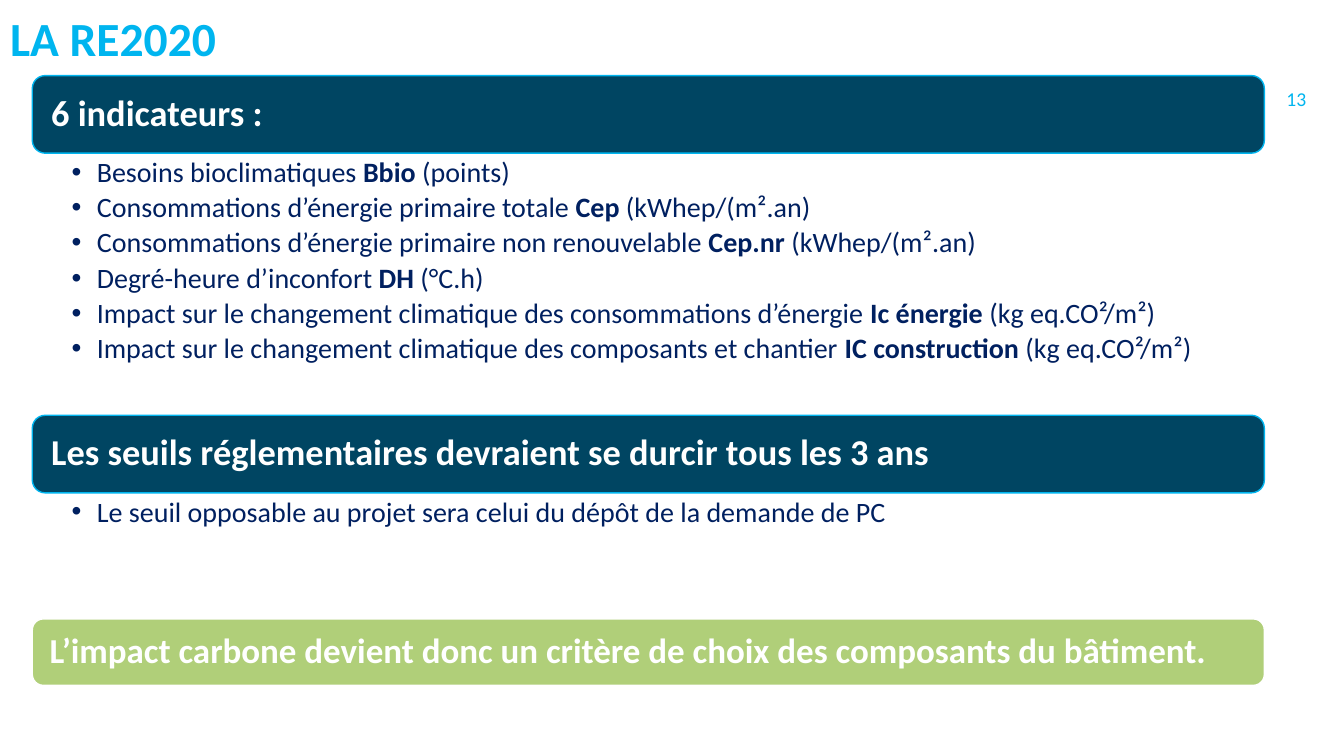
from lxml.etree import SubElement
from pptx import Presentation
from pptx.dml.color import RGBColor
from pptx.enum.shapes import MSO_SHAPE as Shape
from pptx.enum.text import MSO_ANCHOR as Anchor, PP_ALIGN as Align
from pptx.oxml.ns import qn
from pptx.util import Emu, Pt

PX = 9144
FONT = "Calibri"
CYAN, NAVY, TEAL, GREEN, WHITE = "00B5EF", "002060", "004562", "B0CF79", "FFFFFF"
LEFT, WIDTH = 32, 1222

INDICATORS = [
    ("Besoins bioclimatiques ", "Bbio", " (points)"),
    ("Consommations d’énergie primaire totale ", "Cep", " (kWhep/(m².an)"),
    ("Consommations d’énergie primaire non renouvelable ", "Cep.nr", " (kWhep/(m².an)"),
    ("Degré-heure d’inconfort ", "DH", " (°C.h)"),
    ("Impact sur le changement climatique des consommations d’énergie ",
     "Ic énergie ", "(kg eq.CO²/m²)"),
    ("Impact sur le changement climatique des composants et chantier ",
     "IC construction ", "(kg eq.CO²/m²)"),
]
THRESHOLDS = [("Le seuil opposable au projet sera celui du dépôt de la demande de PC",)]


def px(*lengths):
    """Turn px lengths into EMU."""
    return [Emu(length * PX) for length in lengths]


def color(value):
    """Turn a hex string into a colour."""
    return RGBColor.from_string(value)


def style(font, size, value, bold=False):
    """Format a font."""
    font.name, font.size, font.bold = FONT, Pt(size), bold
    font.color.rgb = color(value)


def set_frame(frame, anchor, left=10, top=5, right=10, bottom=5):
    """Set the wrapping, anchor and insets of a text frame."""
    frame.word_wrap = True
    frame.vertical_anchor = anchor
    frame.margin_left, frame.margin_top, frame.margin_right, frame.margin_bottom = px(
        left, top, right, bottom)


def add_line(frame, text, size, value, bold=False):
    """Fill a frame with one left-aligned line of text."""
    frame.text = text
    para = frame.paragraphs[0]
    para.alignment = Align.LEFT
    style(para.runs[0].font, size, value, bold)
    return para


def add_title(page, text, box):
    """Place and format the title placeholder."""
    title = page.shapes.title
    title.left, title.top, title.width, title.height = px(*box)
    set_frame(title.text_frame, Anchor.BOTTOM)
    add_line(title.text_frame, text, 34, CYAN, True)


def add_number(page, text, box):
    """Add the page number."""
    frame = page.shapes.add_textbox(*px(*box)).text_frame
    set_frame(frame, Anchor.MIDDLE)
    add_line(frame, text, 14, CYAN)


def add_banner(page, text, box, fill, line, size, inset):
    """Add a rounded banner with a bold heading."""
    banner = page.shapes.add_shape(Shape.ROUNDED_RECTANGLE, *px(*box))
    banner.shadow.inherit = False
    banner.fill.solid()
    banner.fill.fore_color.rgb = color(fill)
    banner.line.color.rgb = color(line)
    banner.line.width = Pt(1)
    set_frame(banner.text_frame, Anchor.MIDDLE, inset, inset, inset, inset)
    add_line(banner.text_frame, text, size, WHITE, True).line_spacing = 0.9


def add_bullets(page, items, box):
    """Add bulleted lines whose second part is bold."""
    frame = page.shapes.add_textbox(*px(*box)).text_frame
    set_frame(frame, Anchor.TOP, 39, 4, 20, 4)
    for index, parts in enumerate(items):
        para = frame.add_paragraph() if index else frame.paragraphs[0]
        para.line_spacing, para.space_after = 0.9, Pt(3.6)
        properties = para._p.get_or_add_pPr()
        indent = 25 * PX
        properties.set("marL", str(indent))
        properties.set("indent", str(-indent))
        SubElement(properties, qn("a:buFont"), typeface="Arial")
        SubElement(properties, qn("a:buChar"), char="•")
        for position, part in enumerate(parts):
            span = para.add_run()
            span.text = part
            style(span.font, 20, NAVY, position == 1)


def add_section(page, heading, items, box):
    """Add a banner with its bullets below."""
    left, top, width, height = box
    banner_height = 77
    add_banner(page, heading, (left, top, width, banner_height), TEAL, CYAN, 26, 15)
    body_top = banner_height + 1
    add_bullets(page, items, (left, top + body_top, width, height - body_top))


def main():
    """Build the deck."""
    deck = Presentation()
    deck.slide_width, deck.slide_height = px(1333, 750)
    page = deck.slides.add_slide(deck.slide_layouts[5])
    add_title(page, "LA RE2020", (0, 12, 1108, 59))
    add_section(page, "6 indicateurs :", INDICATORS, (LEFT, 75, WIDTH, 338))
    add_section(page, "Les seuils réglementaires devraient se durcir tous les 3 ans",
                THRESHOLDS, (LEFT, 412, WIDTH, 211))
    add_number(page, "13", (1266, 64, 67, 67))
    add_banner(page,
               "L’impact carbone devient donc un critère de choix des composants du bâtiment.",
               (LEFT, 614, WIDTH, 66), GREEN, WHITE, 25, 14)
    deck.save("out.pptx")


if __name__ == "__main__":
    main()
